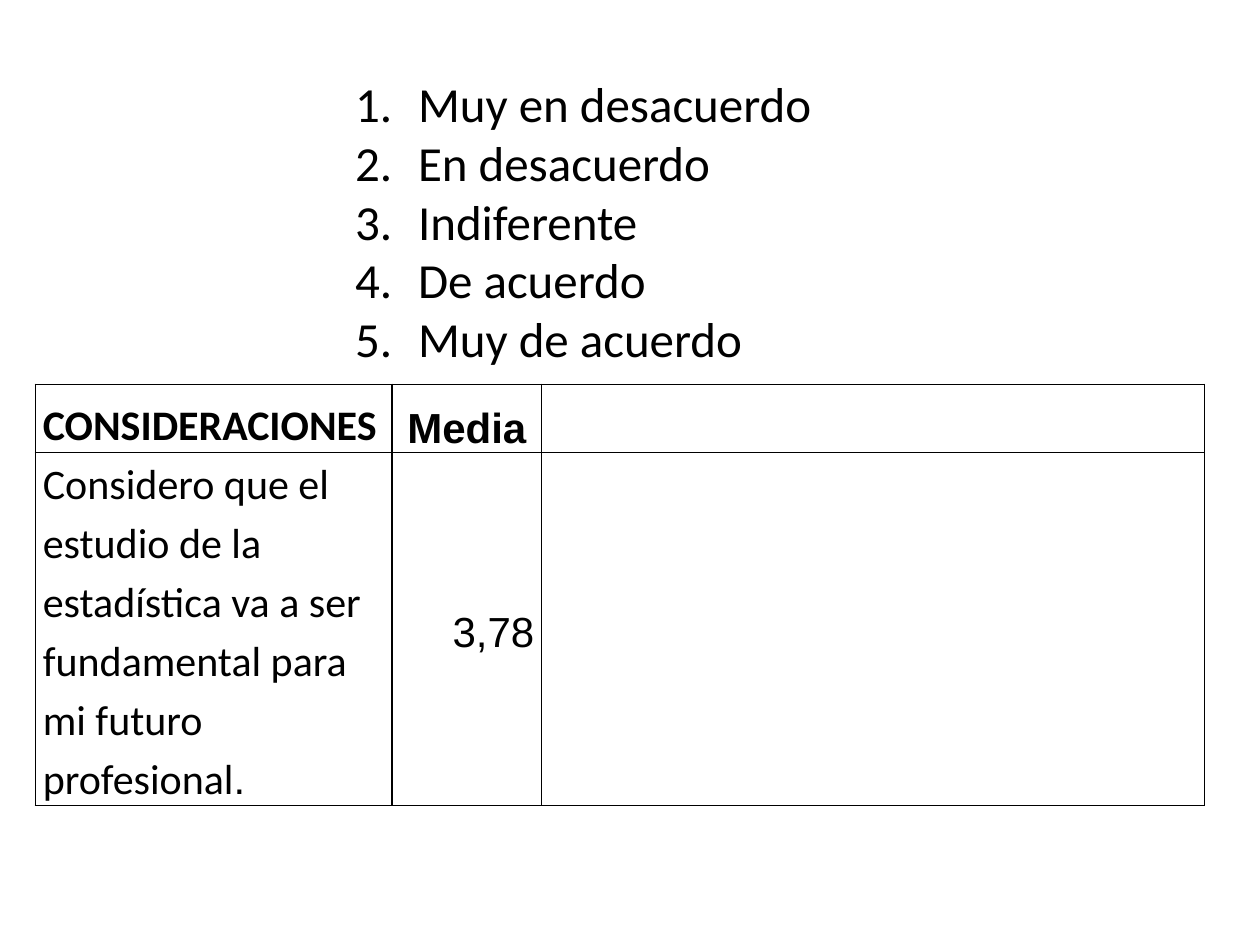
import pptx
import pptx.util
import pptx.dml.color
import pptx.enum.text
import pptx.oxml
import pptx.oxml.ns

Inches = pptx.util.Inches
Pt = pptx.util.Pt
ALIGN = pptx.enum.text.PP_ALIGN
ANCHOR = pptx.enum.text.MSO_ANCHOR
COLORS = {"ink": "000000", "paper": "FFFFFF"}

SCALE = ["Muy en desacuerdo", "En desacuerdo", "Indiferente",
         "De acuerdo", "Muy de acuerdo"]
CLAIM = ("Considero que el estudio de la estadística va a ser "
         "fundamental para mi futuro profesional")


def color(name):
    return pptx.dml.color.RGBColor.from_string(COLORS[name])


def add_run(para, text, size, font="Calibri", bold=False):
    run = para.add_run()
    run.text = text
    run.font.size = Pt(size)
    run.font.name = font
    run.font.bold = bold
    run.font.color.rgb = color("ink")


def add_list(slide, items):
    """Numbered list with a hanging indent."""
    box = slide.shapes.add_textbox(Inches(2.72), Inches(0.52),
                                   Inches(4.96), Inches(2.46))
    frame = box.text_frame
    frame.word_wrap = True
    frame.auto_size = pptx.enum.text.MSO_AUTO_SIZE.SHAPE_TO_FIT_TEXT
    frame.vertical_anchor = ANCHOR.MIDDLE
    for i, item in enumerate(items):
        para = frame.add_paragraph() if i else frame.paragraphs[0]
        props = para._p.get_or_add_pPr()
        props.set("marL", str(Inches(0.5)))
        props.set("indent", str(Inches(-0.5)))
        mark = pptx.oxml.parse_xml(
            f'<a:buAutoNum {pptx.oxml.ns.nsdecls("a")} type="arabicPeriod"/>')
        props.append(mark)
        add_run(para, item, 28)


def style_cell(cell):
    """Thin black borders on a white fill."""
    props = cell._tc.get_or_add_tcPr()
    for side in ("lnL", "lnR", "lnT", "lnB"):
        props.append(pptx.oxml.parse_xml(
            f'<a:{side} {pptx.oxml.ns.nsdecls("a")} w="{Pt(1)}"><a:solidFill>'
            f'<a:srgbClr val="{COLORS["ink"]}"/></a:solidFill></a:{side}>'))
    cell.fill.solid()
    cell.fill.fore_color.rgb = color("paper")


def fill_cell(cell, runs, align, anchor):
    cell.margin_left = cell.margin_right = Inches(0.06)
    cell.margin_top = cell.margin_bottom = 0
    cell.vertical_anchor = anchor
    para = cell.text_frame.paragraphs[0]
    para.alignment = align
    para.line_spacing = 1.15
    for text, font, bold in runs:
        add_run(para, text, 24, font, bold)


def add_grid(slide):
    widths, heights = [2.83, 1.19, 5.26], [0.54, 2.8]
    table = slide.shapes.add_table(
        len(heights), len(widths), Inches(0.28), Inches(3.05),
        Inches(sum(widths)), Inches(sum(heights))).table
    table.first_row = table.horz_banding = False
    for col, width in zip(table.columns, widths):
        col.width = Inches(width)
    for row, height in zip(table.rows, heights):
        row.height = Inches(height)
    for cell in table.iter_cells():
        style_cell(cell)

    # Header row
    fill_cell(table.cell(0, 0), [("CONSIDERACIONES", "Calibri", True)],
              ALIGN.LEFT, ANCHOR.BOTTOM)
    fill_cell(table.cell(0, 1), [("Media", "Arial", True)],
              ALIGN.CENTER, ANCHOR.BOTTOM)
    # Claim and its mean
    fill_cell(table.cell(1, 0),
              [(CLAIM, "Calibri", False), (".", "Arial", False)],
              ALIGN.LEFT, ANCHOR.TOP)
    fill_cell(table.cell(1, 1), [("3,78", "Arial", False)],
              ALIGN.RIGHT, ANCHOR.MIDDLE)


def main():
    deck = pptx.Presentation()
    deck.slide_width, deck.slide_height = Inches(10), Inches(7.5)
    slide = deck.slides.add_slide(deck.slide_layouts[6])
    add_grid(slide)
    add_list(slide, SCALE)
    deck.save("out.pptx")


if __name__ == "__main__":
    main()
